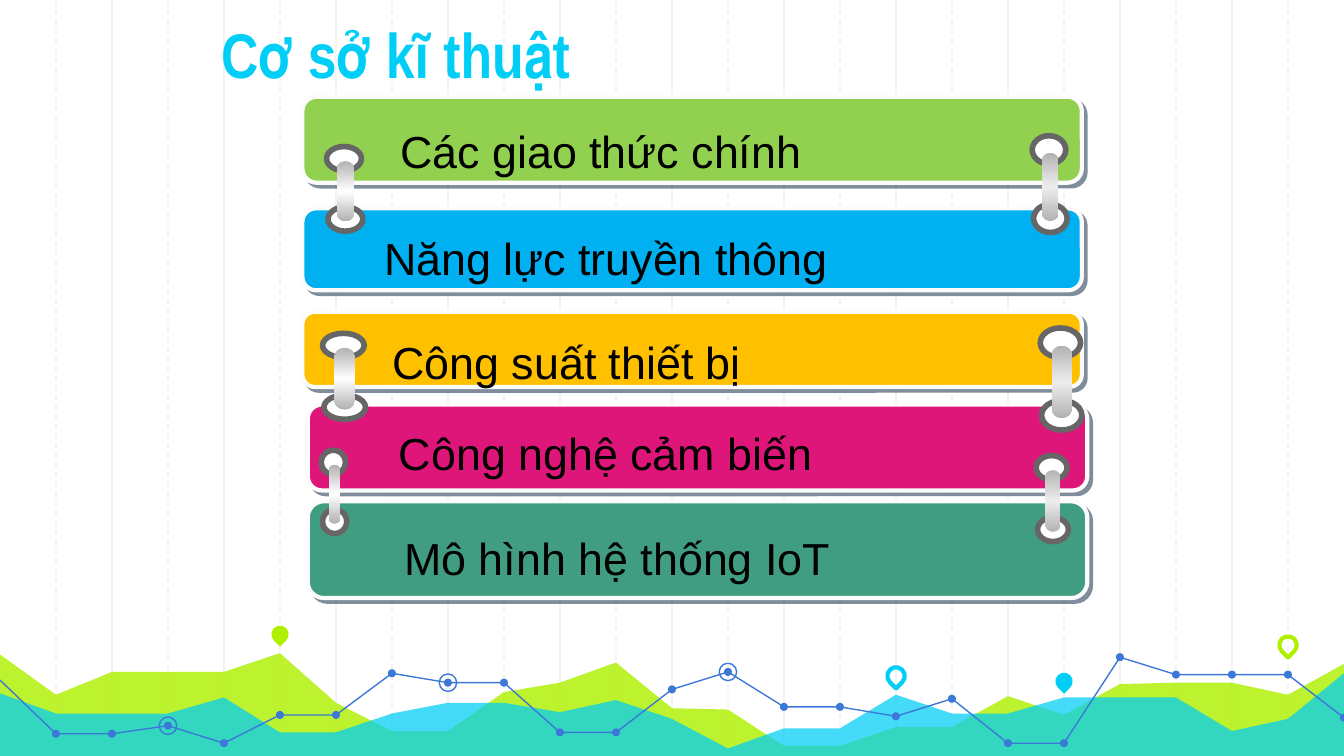
"""Build the technical foundations slide: five linked bars over a wave landscape."""
from copy import deepcopy
from typing import NamedTuple, Optional

from lxml.etree import SubElement
from pptx import Presentation
from pptx.dml.color import RGBColor
from pptx.enum.dml import MSO_LINE
from pptx.enum.shapes import MSO_CONNECTOR, MSO_SHAPE
from pptx.enum.text import MSO_ANCHOR, MSO_AUTO_SIZE, PP_ALIGN
from pptx.oxml.ns import qn
from pptx.util import Inches, Pt

CELL = Inches(1)
COLS = 10
ROWS = COLS * 9 / 16
STEPS = 24
STEP = COLS / STEPS

BLACK = RGBColor(0, 0, 0)
WHITE = RGBColor(0xFF, 0xFF, 0xFF)
GRID = RGBColor(0xF3, 0xF3, 0xF3)
LIME = RGBColor(0xAF, 0xF0, 0x00)
CYAN = RGBColor(0x00, 0xCE, 0xF6)
BLUE = RGBColor(0x3C, 0x78, 0xD8)
EDGE = RGBColor(0xFC, 0xFC, 0xFC)
RING = RGBColor(0x66, 0x66, 0x66)
STEEL = RGBColor(0xB2, 0xB2, 0xB2)
SHINE = RGBColor(0xED, 0xED, 0xED)

LIME_WAVE = [4.87, 5.17, 5, 5, 5, 4.86, 5.23, 5.44, 5.44, 5.15, 5.08, 4.93, 5.27,
             5.28, 5.55, 5.55, 5.41, 5.41, 5.18, 5.32, 5.09, 5.08, 5.08, 5.17, 4.94]
CYAN_WAVE = [5.16, 5.31, 5.31, 5.31, 5.19, 5.45, 5.45, 5.31, 5.23, 5.23, 5.3, 5.21, 5.35,
             5.57, 5.42, 5.42, 5.17, 5.31, 5.31, 5.19, 5.19, 5.19, 5.44, 5.35, 5.01]
TREND = [5.06, 5.46, 5.46, 5.4, 5.53, 5.32, 5.32, 5.01, 5.08, 5.08, 5.45, 5.45, 5.13,
         5, 5.26, 5.26, 5.33, 5.2, 5.53, 5.53, 4.89, 5.02, 5.02, 5.02, 5.34]
TREND_PARTS = [(0, 11), (11, 20), (20, 24)]
RINGED_STEPS = [3, 8, 13]


class Pin(NamedTuple):
    step: int
    y: float
    color: RGBColor
    solid: bool


class Bar(NamedTuple):
    x: float
    y: float
    h: float
    color: RGBColor
    text: str
    text_x: float
    text_y: float
    text_w: float


class Link(NamedTuple):
    x: float
    y: float
    w: float
    h: float
    drop: float
    shine: RGBColor


PINS = [
    Pin(5, 4.72, LIME, True),
    Pin(16, 5.03, CYAN, False),
    Pin(19, 5.07, CYAN, True),
    Pin(23, 4.8, LIME, False),
]
BARS = [
    Bar(2.25, 0.72, 0.64, RGBColor(0x92, 0xD0, 0x50), "Các giao thức chính", 2.88, 0.87, 4.87),
    Bar(2.25, 1.55, 0.61, RGBColor(0x00, 0xB0, 0xF0), "Năng lực truyền thông", 2.76, 1.67, 3.9),
    Bar(2.25, 2.32, 0.56, RGBColor(0xFF, 0xC0, 0x00), "Công suất thiết bị", 2.82, 2.44, 3.55),
    Bar(2.29, 3.01, 0.64, RGBColor(0xDE, 0x16, 0x7A), "Công nghệ cảm biến", 2.87, 3.12, 3.66),
    Bar(2.29, 3.73, 0.72, RGBColor(0x41, 0x9D, 0x81), "Mô hình hệ thống IoT", 2.91, 3.9, 4.18),
]
LINKS = [
    Link(7.68, 1.01, 0.25, 0.21, 0.51, SHINE),
    Link(2.43, 1.09, 0.26, 0.18, 0.45, WHITE),
    Link(7.74, 2.44, 0.3, 0.22, 0.54, SHINE),
    Link(2.4, 2.48, 0.31, 0.18, 0.46, WHITE),
    Link(7.71, 3.39, 0.23, 0.18, 0.46, SHINE),
    Link(2.39, 3.35, 0.18, 0.18, 0.44, WHITE),
]


def cells(*lengths: float) -> list[int]:
    return [round(n * CELL) for n in lengths]


def paint(sp, fill: Optional[RGBColor], line: Optional[RGBColor] = None, width: float = 0.75) -> None:
    sp.shadow.inherit = False
    if fill is None:
        sp.fill.background()
    else:
        sp.fill.solid()
        sp.fill.fore_color.rgb = fill
    if line is None:
        sp.line.fill.background()
    else:
        sp.line.color.rgb = line
        sp.line.width = Pt(width)


def add_grid_line(shapes, step: int) -> None:
    cx = shapes.add_connector(MSO_CONNECTOR.STRAIGHT, *cells(step * STEP, 0, step * STEP, ROWS))
    cx.line.color.rgb = GRID
    cx.line.width = Pt(0.75)
    if step % 2:
        cx.line.dash_style = MSO_LINE.DASH
    SubElement(cx.element.spPr, qn("a:effectLst"))


def add_path(shapes, points: list[tuple[float, float]], close: bool):
    pts = [cells(*pt) for pt in points]
    builder = shapes.build_freeform(*pts[0], scale=1.0)
    builder.add_line_segments(pts[1:], close=close)
    return builder.convert_to_shape()


def add_wave(shapes, tops: list[float], color: RGBColor, alpha: int) -> None:
    crest = [(i * STEP, y) for i, y in enumerate(tops)]
    sp = add_path(shapes, crest + [(COLS, ROWS), (0, ROWS)], True)
    paint(sp, color)
    clr = sp.element.spPr.find(".//" + qn("a:srgbClr"))
    SubElement(clr, qn("a:alpha"), val=str(alpha * 1000))


def add_centred(shapes, kind: MSO_SHAPE, step: int, y: float, size: float):
    return shapes.add_shape(kind, *cells(step * STEP - size / 2, y - size / 2, size, size))


def add_pin(shapes, pin: Pin) -> None:
    sp = add_centred(shapes, MSO_SHAPE.TEAR, pin.step, pin.y, 0.13)
    sp.rotation = 135
    paint(sp, pin.color if pin.solid else None, None if pin.solid else pin.color, 2.25)


def add_trend(shapes) -> None:
    for a, b in TREND_PARTS:
        sp = add_path(shapes, [(i * STEP, TREND[i]) for i in range(a, b + 1)], False)
        paint(sp, None, BLUE)
    for i in range(1, STEPS + 1):
        paint(add_centred(shapes, MSO_SHAPE.OVAL, i, TREND[i], 0.06), BLUE)
    for i in RINGED_STEPS:
        paint(add_centred(shapes, MSO_SHAPE.OVAL, i, TREND[i], 0.13), None, BLUE)


def add_bar(shapes, bar: Bar) -> None:
    sp = shapes.add_shape(MSO_SHAPE.ROUNDED_RECTANGLE, *cells(bar.x, bar.y, 5.8, bar.h))
    paint(sp, bar.color, EDGE, 2.25)
    effects = sp.element.spPr.find(qn("a:effectLst"))
    shadow = SubElement(effects, qn("a:outerShdw"), dist=str(Pt(2.8)), dir="2700000",
                        algn="ctr", rotWithShape="0")
    clr = SubElement(shadow, qn("a:srgbClr"), val="001D3A")
    SubElement(clr, qn("a:alpha"), val="50000")


def add_link(shapes, link: Link) -> None:
    group = shapes.add_group_shape().shapes
    for dx, dy in ((0, 0), (0.01, link.drop)):
        eye = group.add_shape(MSO_SHAPE.OVAL, *cells(link.x + dx, link.y + dy, link.w, link.h))
        paint(eye, WHITE, RING, 3)
    rod = group.add_shape(MSO_SHAPE.ROUNDED_RECTANGLE, *cells(
        link.x + link.w / 4 + 0.01, link.y + link.h * 0.6, link.w / 2, link.drop))
    rod.adjustments[0] = 0.5
    paint(rod, None)
    rod.fill.gradient()
    rod.fill.gradient_angle = 90
    gs_lst = rod.element.spPr.find(".//" + qn("a:gsLst"))
    gs_lst.insert(1, deepcopy(gs_lst[0]))
    for stop, pos, color in zip(rod.fill.gradient_stops, (0, 0.5, 1), (STEEL, link.shine, STEEL)):
        stop.position = pos
        stop.color.rgb = color


def add_label(shapes, bar: Bar) -> None:
    tf = shapes.add_textbox(*cells(bar.text_x, bar.text_y, bar.text_w, 0.5)).text_frame
    tf.word_wrap = True
    tf.auto_size = MSO_AUTO_SIZE.SHAPE_TO_FIT_TEXT
    p = tf.paragraphs[0]
    p.text = bar.text
    p.font.name, p.font.size, p.font.color.rgb = "Arial", Pt(24), BLACK


def set_title(title, text: str) -> None:
    title.left, title.top, title.width, title.height = cells(0.3, 0, 5.29, 0.78)
    title.element.getparent().append(title.element)
    tf = title.text_frame
    tf.auto_size = MSO_AUTO_SIZE.NONE
    tf.vertical_anchor = MSO_ANCHOR.BOTTOM
    tf.margin_left = tf.margin_right = tf.margin_top = tf.margin_bottom = Inches(0.1)
    p = tf.paragraphs[0]
    p.text = text
    p.alignment = PP_ALIGN.CENTER
    p.font.name, p.font.size, p.font.bold = "Arial Narrow", Pt(33.8), True
    p.font.color.rgb = CYAN


def main() -> None:
    prs = Presentation()
    prs.slide_width, prs.slide_height = cells(COLS, ROWS)
    shapes = prs.slides.add_slide(prs.slide_layouts[5]).shapes
    for step in range(1, STEPS):
        add_grid_line(shapes, step)
    add_wave(shapes, LIME_WAVE, LIME, 82)
    add_wave(shapes, CYAN_WAVE, CYAN, 73)
    add_trend(shapes)
    for pin in PINS:
        add_pin(shapes, pin)
    set_title(shapes.title, "Cơ sở kĩ thuật")
    for bar in BARS:
        add_bar(shapes, bar)
    for link in LINKS:
        add_link(shapes, link)
    for bar in BARS:
        add_label(shapes, bar)
    prs.save("out.pptx")


if __name__ == "__main__":
    main()
